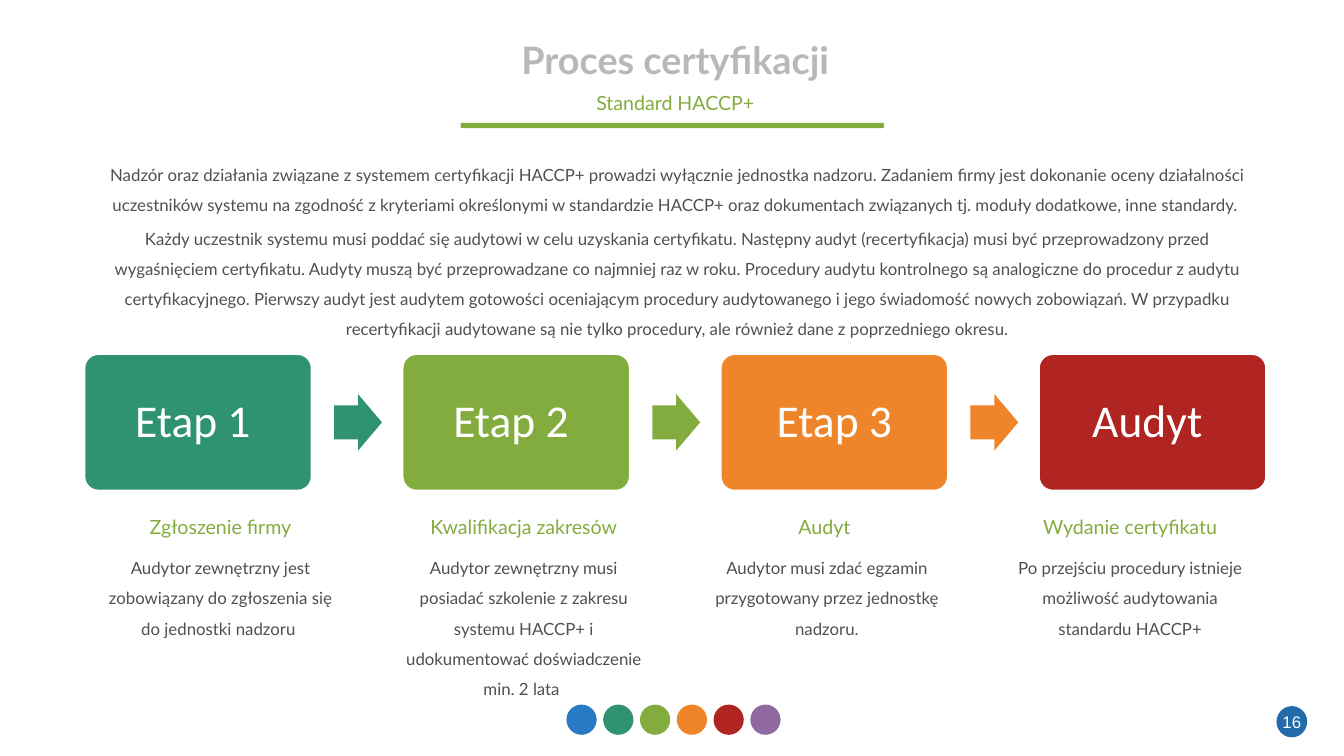
from pptx import Presentation
from pptx import util as u
from pptx.dml.color import RGBColor
from pptx.enum import shapes, text
from pptx.oxml.ns import qn

BLUE = RGBColor(0x27, 0x7B, 0xC4)
TEAL = RGBColor(0x2E, 0x92, 0x73)
GREEN = RGBColor(0x83, 0xAC, 0x3F)
ORANGE = RGBColor(0xEE, 0x85, 0x2A)
RED = RGBColor(0xB0, 0x25, 0x21)
PURPLE = RGBColor(0x90, 0x69, 0xA1)
NAVY = RGBColor(0x22, 0x6B, 0xAB)
SILVER = RGBColor(0xB8, 0xB8, 0xB8)
GREY = RGBColor(0x50, 0x50, 0x50)
WHITE = RGBColor(0xFF, 0xFF, 0xFF)

TITLE = "Proces certyfikacji"
SUB = "Standard HACCP+"
INTRO = [
    "Nadzór oraz działania związane z systemem certyfikacji HACCP+ prowadzi "
    "wyłącznie jednostka nadzoru. Zadaniem firmy jest dokonanie oceny działalności "
    "uczestników systemu na zgodność z kryteriami określonymi w standardzie HACCP+ "
    "oraz dokumentach związanych tj. moduły dodatkowe, inne standardy. ",
    "Każdy uczestnik systemu musi poddać się audytowi w celu uzyskania certyfikatu. "
    "Następny audyt (recertyfikacja) musi być przeprowadzony przed wygaśnięciem "
    "certyfikatu. Audyty muszą być przeprowadzane co najmniej raz w roku. Procedury "
    "audytu kontrolnego są analogiczne do procedur z audytu certyfikacyjnego. Pierwszy "
    "audyt jest audytem gotowości oceniającym procedury audytowanego i jego świadomość "
    "nowych zobowiązań. W przypadku recertyfikacji audytowane są nie tylko procedury, "
    "ale również dane z poprzedniego okresu.",
]
STEPS = [
    ("Etap 1 ", TEAL, "Zgłoszenie firmy",
     "Audytor zewnętrzny jest zobowiązany do zgłoszenia się do jednostki nadzoru "),
    ("Etap 2 ", GREEN, "Kwalifikacja zakresów",
     "Audytor zewnętrzny musi posiadać szkolenie z zakresu systemu HACCP+ "
     "i udokumentować doświadczenie min. 2 lata "),
    ("Etap 3", ORANGE, "Audyt ",
     "Audytor musi zdać egzamin przygotowany przez jednostkę nadzoru."),
    ("Audyt ", RED, "Wydanie certyfikatu",
     "Po przejściu procedury istnieje możliwość audytowania standardu HACCP+"),
]
DOTS = [BLUE, TEAL, GREEN, ORANGE, RED, PURPLE]
PAGE = "16"

LEFT, WIDE = 1.68, 23.44
BOX_W, BOX_H, BOX_Y = 4.5, 2.7, 7.03
BOX_STEP = (WIDE - BOX_W) / 3
COL_W = 5.39
COL_STEP = (WIDE - COL_W) / 3
ARROW_W, ARROW_H = 0.95, 1.12
DOT, DOT_STEP = 0.6, 0.73
HEAD_PAD = (0, 0.11)
BODY_PAD = (0.27, 0.13)

deck = Presentation()
deck.slide_width, deck.slide_height = u.Inches(26.67), u.Inches(15)
slide = deck.slides.add_slide(deck.slide_layouts[1])


def put(kind, x, y, w, h, fill, adj=()):
    item = slide.shapes.add_shape(kind, *map(u.Inches, (x, y, w, h)))
    item.shadow.inherit = False
    item.fill.solid()
    item.fill.fore_color.rgb = fill
    item.line.fill.background()
    for i, value in enumerate(adj):
        item.adjustments[i] = value
    return item


def write(item, lines, size, color, font="Lato", bold=False, pad=(0, 0),
          mid=True, space=1, wrap=True):
    frame = item.text_frame
    frame.word_wrap = wrap
    frame.auto_size = text.MSO_AUTO_SIZE.NONE
    frame.vertical_anchor = text.MSO_ANCHOR.MIDDLE if mid else text.MSO_ANCHOR.TOP
    frame.margin_left = frame.margin_right = u.Inches(pad[0])
    frame.margin_top = frame.margin_bottom = u.Inches(pad[1])
    for i, line in enumerate(lines):
        para = frame.add_paragraph() if i else frame.paragraphs[0]
        props = para._p.get_or_add_pPr()
        props.set("marL", "0")
        props.set("indent", "0")
        para.alignment = text.PP_ALIGN.CENTER
        para.line_spacing = space
        para.space_before = u.Pt(5 if i else 0)
        props.append(props.makeelement(qn("a:buNone"), {}))
        run = para.add_run()
        run.text = line
        run.font.size, run.font.name, run.font.bold = u.Pt(size), font, bold
        run.font.color.rgb = color


def place(item, x, y, w, h):
    item.left, item.top, item.width, item.height = map(u.Inches, (x, y, w, h))
    return item


def label(x, y, w, h):
    return slide.shapes.add_textbox(*map(u.Inches, (x, y, w, h)))


ROUND = shapes.MSO_SHAPE.ROUNDED_RECTANGLE
ARROW = shapes.MSO_SHAPE.RIGHT_ARROW
OVAL = shapes.MSO_SHAPE.OVAL

# Heading and introduction
write(place(slide.shapes.title, LEFT, 0.71, WIDE, 0.94), [TITLE], 54, SILVER,
      bold=True, pad=HEAD_PAD)
write(label(LEFT, 1.78, WIDE, 0.5), [SUB], 28, GREEN, pad=HEAD_PAD)
put(ROUND, 9.14, 2.44, 8.4, 0.1, GREEN, [0.22])
write(place(slide.placeholders[1], LEFT, 2.93, 23.51, 2.29), INTRO, 24, GREY,
      pad=BODY_PAD, mid=False, space=1.5)

# Steps, arrows between them and captions below
for i, (name, color, head, body) in enumerate(STEPS):
    x = LEFT + i * BOX_STEP
    box = put(ROUND, x, BOX_Y, BOX_W, BOX_H, color, [0.1])
    box.line.color.rgb, box.line.width = WHITE, u.Pt(2)
    write(box, [name], 65, WHITE, "Calibri", pad=(0.27, 0.27), space=0.9)
    if i < len(STEPS) - 1:
        put(ARROW, x + BOX_W * 1.1, BOX_Y + (BOX_H - ARROW_H) / 2,
            ARROW_W, ARROW_H, color, [0.6, 0.5])
    x = LEFT + i * COL_STEP
    write(label(x, 10.16, COL_W, 0.58), [head], 28, GREEN, pad=HEAD_PAD)
    write(label(x, 10.74, COL_W, 3.38), [body], 24, GREY, pad=BODY_PAD,
          mid=False, space=1.5)

# Footer
for i, color in enumerate(DOTS):
    put(OVAL, 11.24 + i * DOT_STEP, 13.98, DOT, DOT, color)
write(put(OVAL, 25.33, 14.01, 0.61, 0.62, NAVY), [PAGE], 24, WHITE, "Arial", wrap=False)

deck.save("out.pptx")
